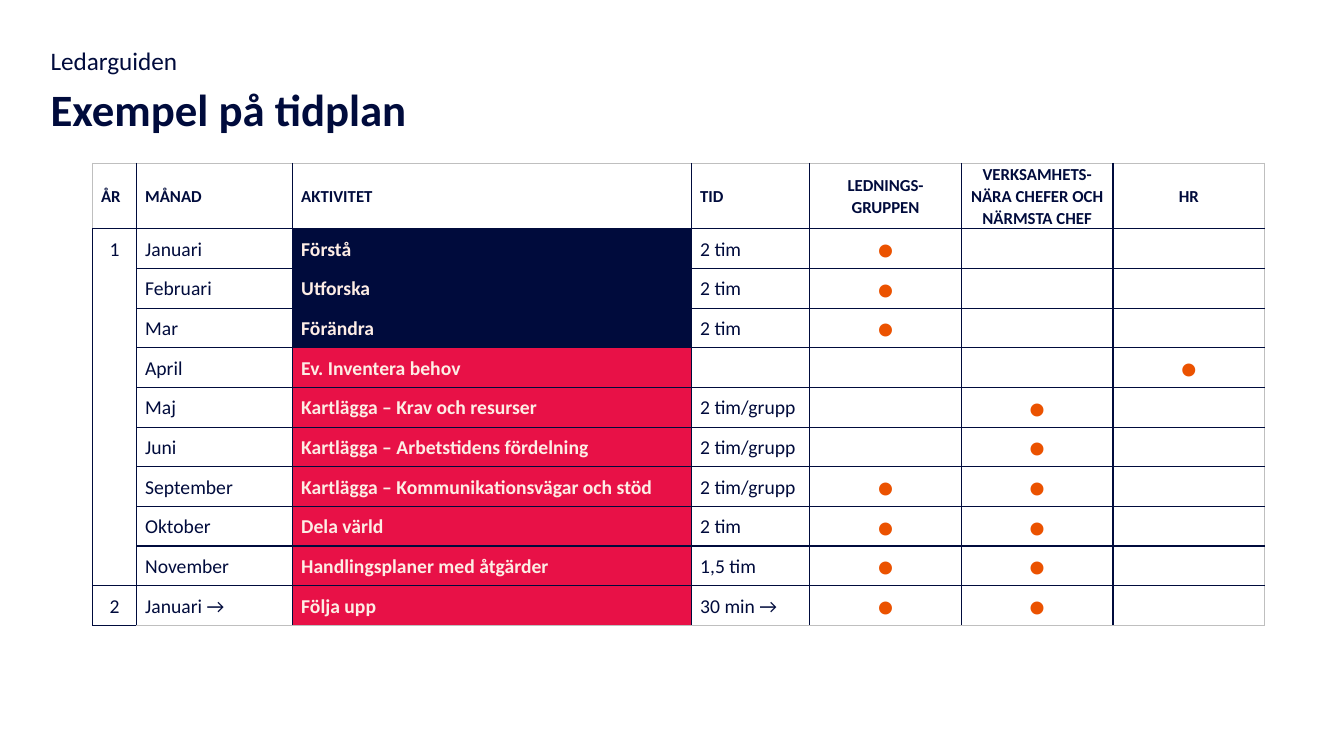
from lxml.etree import SubElement
from pptx import Presentation
from pptx.dml.color import RGBColor
from pptx.enum.text import MSO_ANCHOR, PP_ALIGN
from pptx.oxml.ns import qn
from pptx.util import Pt

NAVY = RGBColor(0x00, 0x0B, 0x3C)
RED = RGBColor(0xE8, 0x11, 0x47)
ORANGE = RGBColor(0xEB, 0x52, 0x00)
CREAM = RGBColor(0xFD, 0xED, 0xE5)
GREY = RGBColor(0xBF, 0xBF, 0xBF)
FONT = "Calibri"

HEADINGS = ["ÅR", "MÅNAD", "AKTIVITET", "TID", "LEDNINGS-GRUPPEN",
            "VERKSAMHETS-NÄRA CHEFER OCH NÄRMSTA CHEF", "HR"]
DOT = "●"
# Year, month, activity, time, management group, managers, HR
SCHEDULE = [
    ["1", "Januari", "Förstå", "2 tim", DOT, "", ""],
    ["", "Februari", "Utforska", "2 tim", DOT, "", ""],
    ["", "Mar", "Förändra", "2 tim", DOT, "", ""],
    ["", "April", "Ev. Inventera behov", "", "", "", DOT],
    ["", "Maj", "Kartlägga – Krav och resurser", "2 tim/grupp", "", DOT, ""],
    ["", "Juni", "Kartlägga – Arbetstidens fördelning", "2 tim/grupp", "", DOT, ""],
    ["", "September", "Kartlägga – Kommunikationsvägar och stöd", "2 tim/grupp", DOT, DOT, ""],
    ["", "Oktober", "Dela värld", "2 tim", DOT, DOT, ""],
    ["", "November", "Handlingsplaner med åtgärder", "1,5 tim", DOT, DOT, ""],
    ["2", "Januari →", "Följa upp", "30 min →", DOT, DOT, ""],
]
COLUMN_WIDTHS = [31.5, 111.5, 285, 84.3, 108.3, 108.3, 108.3]
HEADER_HEIGHT, ROW_HEIGHT = 47, 28.33
ACTIVITY = 2
LAST_ROW, LAST_COLUMN = len(SCHEDULE), len(HEADINGS) - 1


def add_span(para, text, size, color=NAVY, bold=False):
    span = para.add_run()
    span.text = text
    span.font.name = FONT
    span.font.size = Pt(size)
    span.font.bold = bold
    span.font.color.rgb = color


def add_heading(page, left, top, width, height, text, size, bold):
    box = page.shapes.add_textbox(Pt(left), Pt(top), Pt(width), Pt(height))
    box.text_frame.word_wrap = True
    add_span(box.text_frame.paragraphs[0], text, size, bold=bold)


def line_above(row, column):
    """Colour of the rule above a row; None means no rule."""
    if row == 0 or (row > LAST_ROW and column > 0):
        return GREY
    if column == 0 and 1 < row < LAST_ROW:
        return None
    return NAVY


def line_left(row, column):
    """Colour of the rule left of a column."""
    outer = column > LAST_COLUMN or (column == 0 and row == 0)
    return GREY if outer else NAVY


def set_borders(cell, row, column):
    edges = {"a:lnL": line_left(row, column), "a:lnR": line_left(row, column + 1),
             "a:lnT": line_above(row, column), "a:lnB": line_above(row + 1, column)}
    properties = cell._tc.get_or_add_tcPr()
    for tag, color in edges.items():
        width = Pt(0.5) if color == GREY else Pt(1)
        line = SubElement(properties, qn(tag), w=str(width))
        if color is None:
            SubElement(line, qn("a:noFill"))
        else:
            fill = SubElement(line, qn("a:solidFill"))
            SubElement(fill, qn("a:srgbClr"), val=str(color))


def fill_cell(cell, row, column, text):
    cell.margin_left = cell.margin_right = Pt(6)
    cell.margin_top = cell.margin_bottom = 0
    cell.vertical_anchor = MSO_ANCHOR.MIDDLE
    set_borders(cell, row, column)

    # Background
    if row > 0 and column == ACTIVITY:
        cell.fill.solid()
        cell.fill.fore_color.rgb = NAVY if row <= 3 else RED
    else:
        cell.fill.background()

    # Text
    para = cell.text_frame.paragraphs[0]
    centred = column > 3 or (column == 0 and row > 0)
    para.alignment = PP_ALIGN.CENTER if centred else PP_ALIGN.LEFT
    para.line_spacing = 1.07
    if not text:
        para.font.size = Pt(14)
    elif row == 0:
        add_span(para, text, 12, bold=True)
    elif text == DOT:
        add_span(para, text, 20, ORANGE)
    elif column == ACTIVITY:
        add_span(para, text, 14, CREAM, bold=True)
    else:
        add_span(para, text, 14)


def add_schedule(page, left, top):
    heights = [HEADER_HEIGHT] + [ROW_HEIGHT] * len(SCHEDULE)
    frame = page.shapes.add_table(len(heights), len(COLUMN_WIDTHS), Pt(left), Pt(top),
                                  Pt(sum(COLUMN_WIDTHS)), Pt(sum(heights)))
    table = frame.table
    table.first_row = table.horz_banding = False
    for column, width in zip(table.columns, COLUMN_WIDTHS):
        column.width = Pt(width)
    for row, height in zip(table.rows, heights):
        row.height = Pt(height)
    for row, texts in enumerate([HEADINGS] + SCHEDULE):
        for column, text in enumerate(texts):
            fill_cell(table.cell(row, column), row, column, text)
    # The autumn months share one year cell
    table.cell(7, 0).merge(table.cell(9, 0))


def main():
    deck = Presentation()
    deck.slide_width, deck.slide_height = Pt(960), Pt(540)
    page = deck.slides.add_slide(deck.slide_layouts[6])
    add_schedule(page, 66.2, 116.5)
    add_heading(page, 29, 54.7, 904, 57, "Exempel på tidplan", 32, True)
    add_heading(page, 29, 29, 904, 26, "Ledarguiden", 18, False)
    deck.save("out.pptx")


if __name__ == "__main__":
    main()
